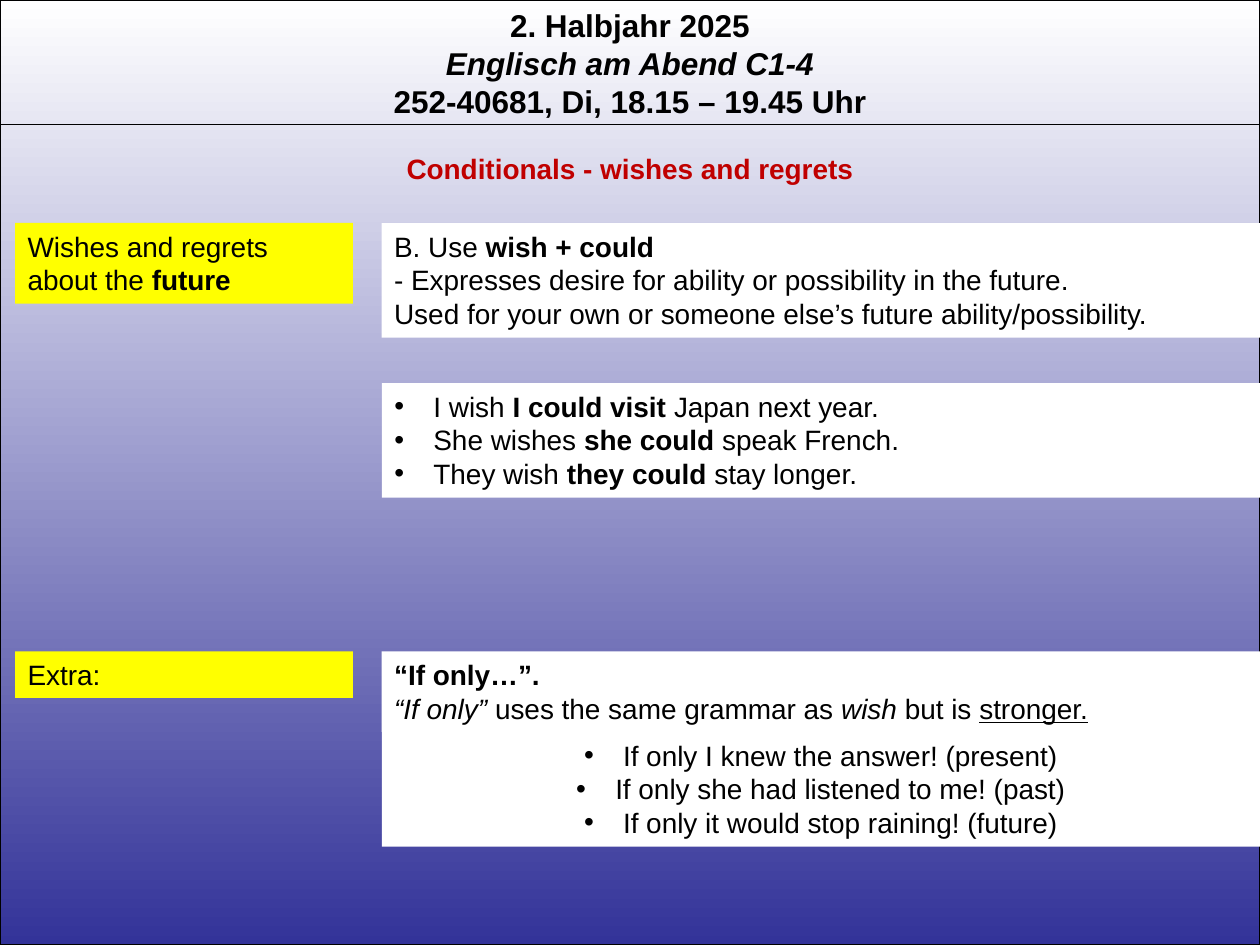
from dataclasses import dataclass

from lxml import etree
from pptx import Presentation
from pptx.dml.color import RGBColor
from pptx.enum.shapes import MSO_CONNECTOR, MSO_SHAPE
from pptx.enum.text import MSO_ANCHOR, MSO_AUTO_SIZE, PP_ALIGN
from pptx.oxml.ns import qn
from pptx.util import Inches, Pt

RECTANGLE = MSO_SHAPE.RECTANGLE
STRAIGHT = MSO_CONNECTOR.STRAIGHT
TOP = MSO_ANCHOR.TOP
FIXED = MSO_AUTO_SIZE.NONE
LEFT, CENTER = PP_ALIGN.LEFT, PP_ALIGN.CENTER
TWO_CONTENT = 3


@dataclass(frozen=True)
class Theme:
    font: str = "Arial"
    ink: RGBColor = RGBColor(0, 0, 0)
    accent: RGBColor = RGBColor(0xC0, 0, 0)
    label: RGBColor = RGBColor(0xFF, 0xFF, 0)
    panel: RGBColor = RGBColor(0xFF, 0xFF, 0xFF)
    deep: RGBColor = RGBColor(0x33, 0x33, 0x99)
    header_size: Pt = Pt(18)
    text_size: Pt = Pt(16)
    line_width: Pt = Pt(0.75)
    bullet_indent: Inches = Inches(0.31)


THEME = Theme()

# Boxes are left, top, width, height in inches
PAGE = (0, 0, 10, 7.5)
LABEL_LEFT, LABEL_WIDTH = 0.12, 2.68
PANEL_LEFT, PANEL_WIDTH = 3.03, 6.97
ONE_LINE, TWO_LINES, THREE_LINES = 0.37, 0.64, 0.91
RULE_TOP, EXAMPLES_TOP, EXTRA_TOP = 1.77, 3.04, 5.17

# Each paragraph is a list of (text, style); style letters are b, i, u
HEADER = [
    [("2. Halbjahr 2025", "b")],
    [("Englisch am Abend C1-4", "bi")],
    [("252-40681, Di, 18.15 – 19.45 Uhr", "b")],
]
TITLE = [[("Conditionals - wishes and regrets", "b")]]
FUTURE_LABEL = [[("Wishes and regrets about the ", ""), ("future", "b")]]
RULE = [
    [("B. Use ", ""), ("wish + could", "b")],
    [("- Expresses desire for ability or possibility in the future.", "")],
    [("Used for your own or someone else’s future ability/possibility.", "")],
]
EXAMPLES = [
    [("I wish ", ""), ("I could visit ", "b"), ("Japan next year.", "")],
    [("She wishes ", ""), ("she could ", "b"), ("speak French.", "")],
    [("They wish ", ""), ("they could ", "b"), ("stay longer.", "")],
]
EXTRA_LABEL = [[("Extra:", "")]]
EXTRA_RULE = [
    [("“If only…”.", "b")],
    [("“If only” ", "i"), ("uses the same grammar as ", ""), ("wish", "i"),
     (" but is ", ""), ("stronger.", "u")],
]
EXTRA_EXAMPLES = [
    [("If only I knew the answer! (present)", "")],
    [("If only she had listened to me! (past)", "")],
    [("If only it would stop raining! (future)", "")],
]


def place(shape, box):
    shape.left, shape.top, shape.width, shape.height = map(Inches, box)


def add_bullet(para):
    properties = para._p.get_or_add_pPr()
    properties.set("marL", str(THEME.bullet_indent))
    properties.set("indent", str(-THEME.bullet_indent))
    etree.SubElement(properties, qn("a:buFont")).set("typeface", THEME.font)
    etree.SubElement(properties, qn("a:buChar")).set("char", "•")


def write(shape, paragraphs, size=THEME.text_size, color=THEME.ink,
          align=LEFT, bulleted=False):
    frame = shape.text_frame
    frame.word_wrap = True
    frame.auto_size = FIXED
    frame.vertical_anchor = TOP
    for index, spans in enumerate(paragraphs):
        para = frame.add_paragraph() if index else frame.paragraphs[0]
        if bulleted:
            add_bullet(para)
        para.alignment = align
        para.space_before = Pt(0)
        for text, style in spans:
            span = para.add_run()
            span.text = text
            font = span.font
            font.name, font.size, font.color.rgb = THEME.font, size, color
            font.bold, font.italic = "b" in style, "i" in style
            font.underline = "u" in style


def add_rectangle(page, box):
    shape = page.shapes.add_shape(RECTANGLE, *map(Inches, box))
    shape.shadow.inherit = False
    return shape


def add_backdrop(page, box):
    backdrop = add_rectangle(page, box)
    backdrop.line.color.rgb = THEME.ink
    backdrop.line.width = THEME.line_width
    fill = backdrop.fill
    fill.gradient()
    fill.gradient_angle = 270
    for stop, position, color in zip(fill.gradient_stops, (0, 1), (THEME.panel, THEME.deep)):
        stop.position = position
        stop.color.rgb = color
    # Send behind the placeholders
    page.shapes._spTree.insert(2, backdrop._element)


def add_header(page, box):
    left, top, width, height = box
    header = page.shapes.add_textbox(*map(Inches, box))
    write(header, HEADER, size=THEME.header_size, align=CENTER)
    base = top + height - 0.02
    rule = page.shapes.add_connector(STRAIGHT, *map(Inches, (left, base, left + width, base)))
    rule.line.color.rgb = THEME.ink
    rule.line.width = THEME.line_width
    etree.SubElement(rule._element.spPr, qn("a:effectLst"))


def add_title(page, box):
    title = page.shapes.title
    place(title, box)
    write(title, TITLE, color=THEME.accent, align=CENTER)


def add_card(page, box, paragraphs, color):
    card = add_rectangle(page, box)
    card.fill.solid()
    card.fill.fore_color.rgb = color
    card.line.fill.background()
    write(card, paragraphs)


def add_list(page, index, box, paragraphs, align=LEFT):
    body = page.placeholders[index]
    place(body, box)
    body.fill.solid()
    body.fill.fore_color.rgb = THEME.panel
    write(body, paragraphs, align=align, bulleted=True)


def main():
    deck = Presentation()
    deck.slide_width, deck.slide_height = map(Inches, PAGE[2:])
    page = deck.slides.add_slide(deck.slide_layouts[TWO_CONTENT])

    # Frame and headings
    add_backdrop(page, PAGE)
    add_header(page, (0, 0, 10, 1.01))
    add_title(page, (0, 1.15, 10, ONE_LINE))

    # Wishes about the future
    add_card(page, (LABEL_LEFT, RULE_TOP, LABEL_WIDTH, TWO_LINES), FUTURE_LABEL, THEME.label)
    add_card(page, (PANEL_LEFT, RULE_TOP, PANEL_WIDTH, THREE_LINES), RULE, THEME.panel)
    add_list(page, 1, (PANEL_LEFT, EXAMPLES_TOP, PANEL_WIDTH, THREE_LINES), EXAMPLES)

    # Extra: if only
    add_card(page, (LABEL_LEFT, EXTRA_TOP, LABEL_WIDTH, ONE_LINE), EXTRA_LABEL, THEME.label)
    add_card(page, (PANEL_LEFT, EXTRA_TOP, PANEL_WIDTH, TWO_LINES), EXTRA_RULE, THEME.panel)
    add_list(page, 2, (PANEL_LEFT, EXTRA_TOP + TWO_LINES, PANEL_WIDTH, THREE_LINES),
             EXTRA_EXAMPLES, align=CENTER)

    deck.save("out.pptx")


if __name__ == "__main__":
    main()
